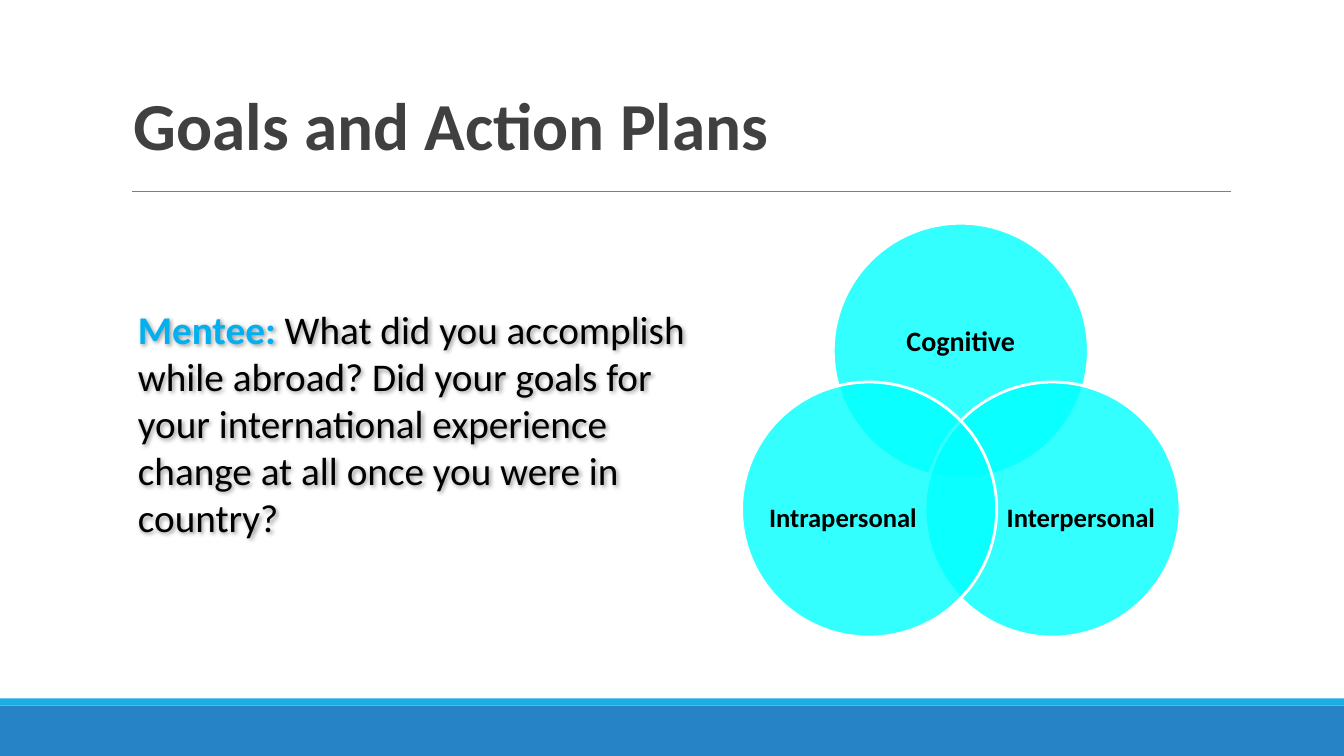
from dataclasses import dataclass
from math import cos, radians, sin

from lxml.etree import SubElement
from pptx import Presentation
from pptx.dml.color import RGBColor
from pptx.enum.shapes import MSO_CONNECTOR as Connector, MSO_SHAPE as Shape
from pptx.enum.text import MSO_ANCHOR as Anchor, PP_ALIGN as Align
from pptx.oxml.ns import qn
from pptx.util import Inches, Pt

TITLE = "Goals and Action Plans"
QUESTION = [
    ("Mentee: ", "accent", True),
    ("What did you accomplish while abroad? Did your goals for your "
     "international experience change at all once you were in country?", "ink", False),
]
# angle, label, label size, label centre
SKILLS = [
    (-90, "Cognitive", 20, (9.53, 3.38)),
    (30, "Interpersonal", 19, (10.72, 5.13)),
    (150, "Intrapersonal", 19, (8.36, 5.13)),
]
BANDS = [(7, 0.5, "band"), (6.93, 0.07, "stripe")]
VENN_CENTRE, VENN_REACH, DIAMETER = (9.53, 4.53), 1.05, 2.53
LABEL_SIZE = (1.6, 0.6)


@dataclass(frozen=True)
class Theme:
    font: str = "Calibri"
    title_size: int = 48
    body_size: int = 28
    title: str = "404040"
    accent: str = "00B0F0"
    ink: str = "000000"
    band: str = "2683C6"
    stripe: str = "1CADE4"
    rule: str = "7F7F7F"
    circle: str = "00FFFF"
    edge: str = "FFFFFF"


theme = Theme()


def color(name):
    return RGBColor.from_string(getattr(theme, name))


def add_filled(slide, kind, box, fill):
    sp = slide.shapes.add_shape(kind, *map(Inches, box))
    sp.shadow.inherit = False
    sp.fill.solid()
    sp.fill.fore_color.rgb = color(fill)
    sp.line.fill.background()
    return sp


def add_text(slide, box, runs, size, anchor=Anchor.TOP, align=Align.LEFT, inset=True):
    sp = slide.shapes.add_textbox(*map(Inches, box))
    tf = sp.text_frame
    tf.word_wrap = True
    tf.vertical_anchor = anchor
    if not inset:
        tf.margin_left = tf.margin_right = tf.margin_top = tf.margin_bottom = 0
    p = tf.paragraphs[0]
    p.alignment = align
    for text, ink, bold in runs:
        r = p.add_run()
        r.text = text
        r.font.name = theme.font
        r.font.size = Pt(size)
        r.font.bold = bold
        r.font.color.rgb = color(ink)
    return sp


def add_soft_shadow(sp):
    effects = SubElement(sp.element.spPr, qn("a:effectLst"))
    shadow = SubElement(effects, qn("a:outerShdw"), blurRad="38100", dist="19050",
                        dir="2700000", algn="tl", rotWithShape="0")
    ink = SubElement(shadow, qn("a:srgbClr"), val=theme.ink)
    SubElement(ink, qn("a:alpha"), val="40000")


def add_circle(slide, angle):
    x, y = (c + VENN_REACH * f(radians(angle)) - DIAMETER / 2
            for c, f in zip(VENN_CENTRE, (cos, sin)))
    sp = add_filled(slide, Shape.OVAL, (x, y, DIAMETER, DIAMETER), "circle")
    fill = sp.element.spPr.find(qn("a:solidFill"))
    SubElement(fill[0], qn("a:alpha"), val="80000")
    sp.line.color.rgb = color("edge")
    sp.line.width = Pt(2)


def add_rule(slide):
    line = slide.shapes.add_connector(
        Connector.STRAIGHT, Inches(1.31), Inches(1.9), Inches(12.21), Inches(1.9))
    line.line.color.rgb = color("rule")
    line.line.width = Pt(0.75)
    SubElement(line.element.spPr, qn("a:effectLst"))


def main():
    prs = Presentation()
    prs.slide_width, prs.slide_height = Inches(13.33), Inches(7.5)
    slide = prs.slides.add_slide(prs.slide_layouts[6])

    for top, height, fill in BANDS:
        add_filled(slide, Shape.RECTANGLE, (0, top, 13.33, height), fill)
    add_rule(slide)

    title = add_text(slide, (1.23, 0.43, 7.99, 1.25), [(TITLE, "title", True)],
                     theme.title_size, Anchor.BOTTOM)
    title.text_frame.paragraphs[0].line_spacing = 0.85

    question = add_text(slide, (1.27, 2.98, 6.03, 3.83), QUESTION, theme.body_size)
    add_soft_shadow(question)

    width, height = LABEL_SIZE
    for angle, label, size, (x, y) in SKILLS:
        add_circle(slide, angle)
        add_text(slide, (x - width / 2, y - height / 2, width, height),
                 [(label, "ink", True)], size, Anchor.MIDDLE, Align.CENTER, inset=False)

    prs.save("out.pptx")


if __name__ == "__main__":
    main()
